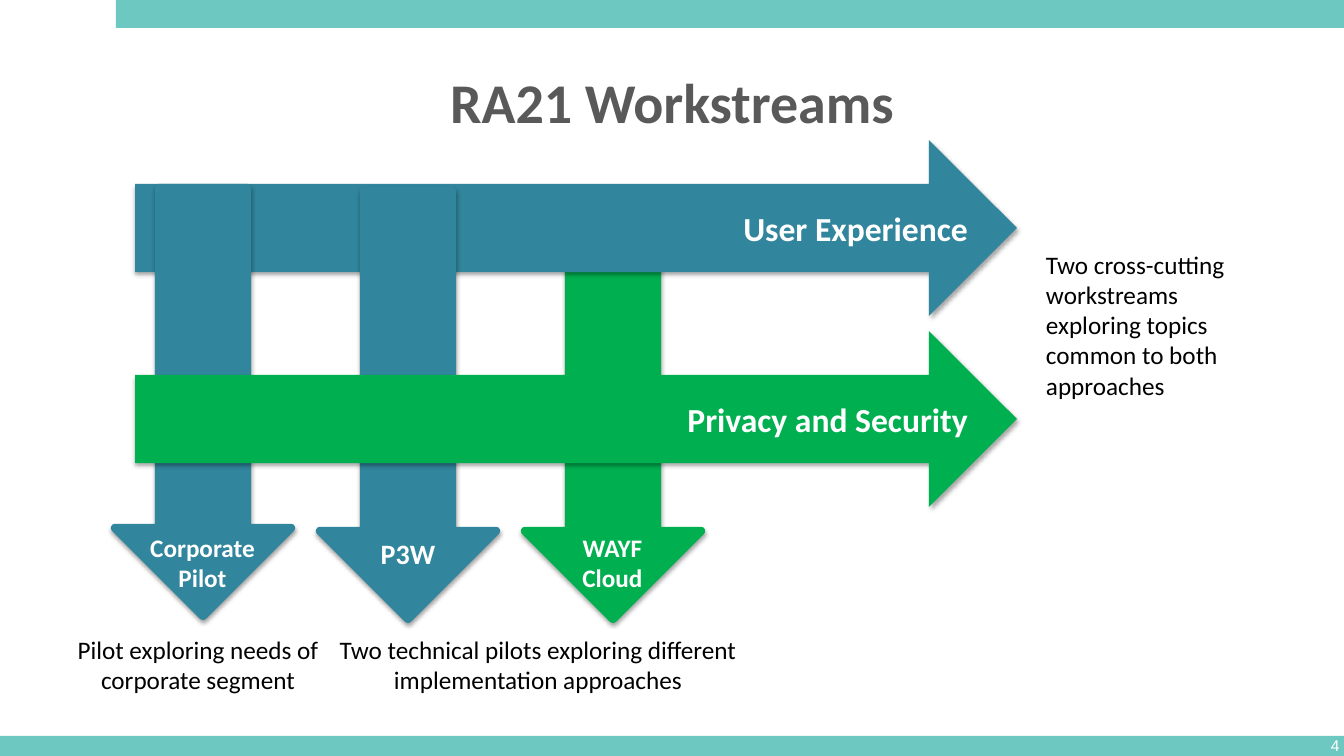
from lxml.etree import SubElement
from pptx import Presentation
from pptx.dml.color import RGBColor
from pptx.enum.shapes import MSO_SHAPE as Shape
from pptx.enum.text import MSO_ANCHOR as Anchor, PP_ALIGN as Align
from pptx.oxml.ns import qn
from pptx.util import Pt

SCALE = 914400 / 100.8
TEAL = RGBColor(0x6D, 0xC8, 0xC1)
BLUE = RGBColor(0x31, 0x85, 0x9C)
GREEN = RGBColor(0x00, 0xB0, 0x50)
GREY = RGBColor(0x59, 0x59, 0x59)
BLACK = RGBColor(0, 0, 0)
WHITE = RGBColor(0xFF, 0xFF, 0xFF)


def px(*sizes):
    return [round(size * SCALE) for size in sizes]


class Board:
    def __init__(self, slide, font="Calibri"):
        self.shapes = slide.shapes
        self.font = font

    def letter(self, shape, text, size, color, bold=False, align=Align.CENTER,
               anchor=Anchor.TOP, wrap=True, pad=5, font=None):
        frame = shape.text_frame
        frame.word_wrap = wrap
        frame.vertical_anchor = anchor
        frame.margin_left, frame.margin_right = px(pad, pad)
        frame.margin_top, frame.margin_bottom = px(5, 5)
        para = frame.paragraphs[0]
        para.text = text
        para.alignment = align
        face = para.font
        face.name = font or self.font
        face.size, face.bold = Pt(size), bold
        face.color.rgb = color

    def label(self, box, text, size, color, **style):
        self.letter(self.shapes.add_textbox(*px(*box)), text, size, color, **style)

    def block(self, kind, box, color):
        shape = self.shapes.add_shape(kind, *px(*box))
        shape.shadow.inherit = False
        shape.fill.solid()
        shape.fill.fore_color.rgb = color
        shape.line.fill.background()
        return shape

    def arrow(self, box, color):
        shape = self.block(Shape.RIGHT_ARROW, box, color)
        effects = shape._element.spPr.find(qn("a:effectLst"))
        shade = SubElement(effects, qn("a:outerShdw"), blurRad="38100",
                           dist="23000", dir="5400000", rotWithShape="0")
        tone = SubElement(shade, qn("a:srgbClr"), val="000000")
        SubElement(tone, qn("a:alpha"), val="35000")
        return shape

    def across(self, top, color, text):
        shape = self.arrow((135, top, 882, 176), color)
        self.letter(shape, text, 24, WHITE, bold=True, align=Align.RIGHT,
                    anchor=Anchor.MIDDLE)

    def down(self, mid, top, color):
        shape = self.arrow((mid - 214, top, 428, 176), color)
        shape.rotation = 90
        shape.line.color.rgb = color
        shape.line.width = Pt(6)
        return shape


def main():
    deck = Presentation()
    deck.slide_width, deck.slide_height = px(1344, 756)
    board = Board(deck.slides.add_slide(deck.slide_layouts[6]))
    corp, press, cloud = (203 + 205 * i for i in range(3))

    # Page bands, title and number
    board.block(Shape.RECTANGLE, (0, 736, 1344, 20), TEAL)
    board.block(Shape.RECTANGLE, (116, 0, 1228, 28), TEAL)
    board.label((67, 51, 1210, 100), "RA21 Workstreams", 40, GREY, bold=True,
                anchor=Anchor.MIDDLE)
    board.label((1326, 731, 18, 29), "4", 11.1, WHITE, align=Align.RIGHT,
                anchor=Anchor.MIDDLE, wrap=False, font="Arial")

    # Woven arrows, back to front
    board.down(cloud, 317, GREEN)
    board.across(140, BLUE, "User Experience")
    pilot = board.down(press, 317, BLUE)
    board.letter(pilot, "P3W", 20, WHITE, bold=True, anchor=Anchor.BOTTOM)
    pilot.text_frame._txBody.bodyPr.set("vert", "vert270")
    board.down(corp, 314, BLUE)
    board.across(331, GREEN, "Privacy and Security")

    # Labels on the arrow heads
    for mid, text in ((corp, "Corporate Pilot"), (cloud, "WAYF Cloud")):
        board.label((mid - 67, 527, 133, 71), text, 18, WHITE, bold=True, pad=10)

    # Notes beside the arrows
    notes = (
        ((58, 629, 280, 71), "Pilot exploring needs of corporate segment", Align.CENTER),
        ((305, 629, 466, 71),
         "Two technical pilots exploring different implementation approaches",
         Align.CENTER),
        ((1041, 244, 239, 163),
         "Two cross-cutting workstreams exploring topics common to both approaches",
         Align.LEFT),
    )
    for box, text, align in notes:
        board.label(box, text, 18, BLACK, align=align)

    deck.save("out.pptx")


if __name__ == "__main__":
    main()
